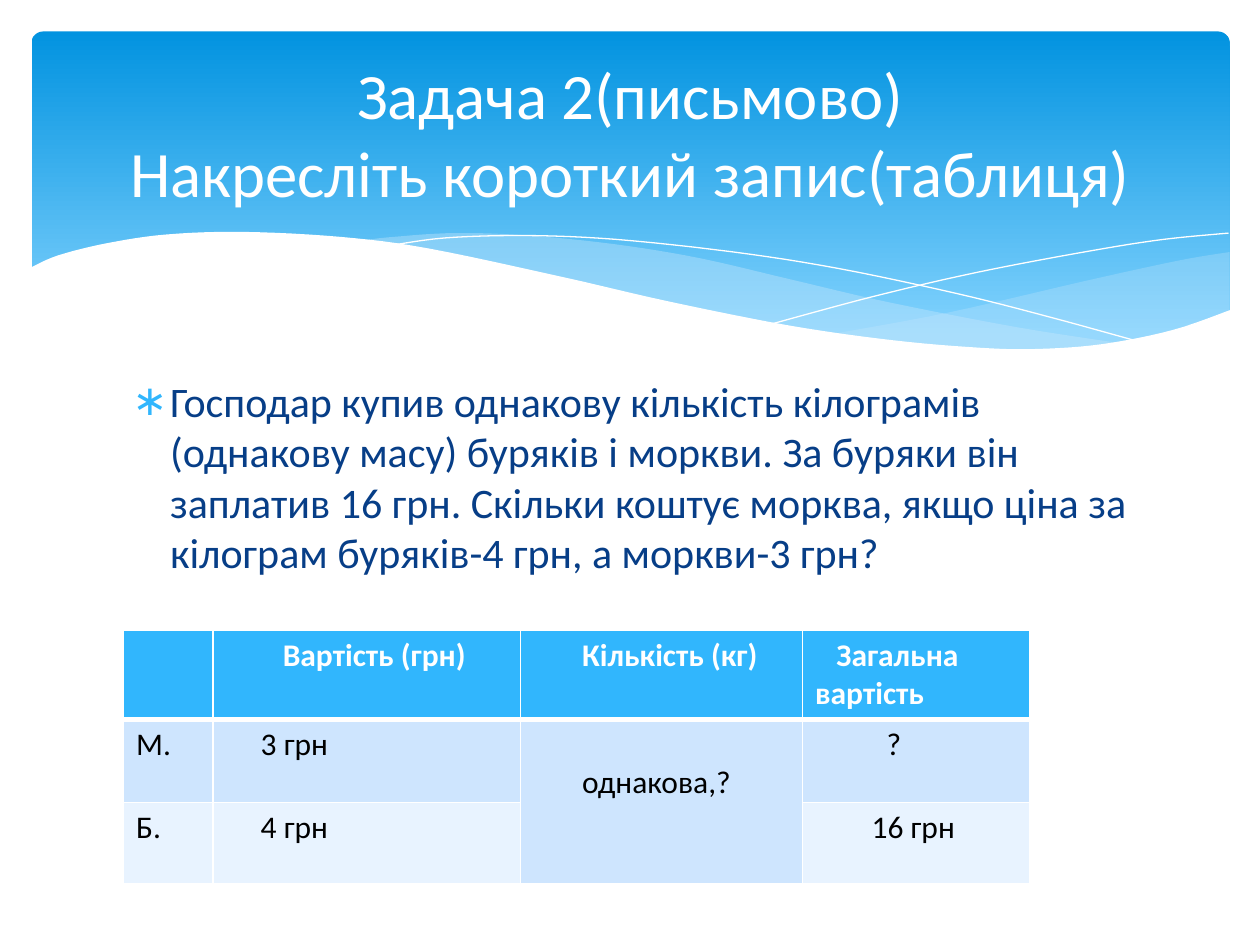
from lxml.etree import SubElement
from pptx import Presentation
from pptx.dml.color import RGBColor
from pptx.enum.shapes import MSO_SHAPE as Preset
from pptx.enum.text import MSO_ANCHOR as Anchor, MSO_AUTO_SIZE as AutoSize, PP_ALIGN as Align
from pptx.oxml.ns import qn
from pptx.util import Pt

WHITE = RGBColor(0xFF, 0xFF, 0xFF)
BLACK = RGBColor(0x00, 0x00, 0x00)
NAVY = RGBColor(0x07, 0x3E, 0x87)
SKY_TOP = RGBColor(0x02, 0x93, 0xE0)
SKY_BOTTOM = RGBColor(0x83, 0xD3, 0xFE)
VEIL = RGBColor(0xC6, 0xE7, 0xFC)
ACCENT = RGBColor(0x31, 0xB6, 0xFD)
ROW_DARK = RGBColor(0xCE, 0xE5, 0xFE)
ROW_LIGHT = RGBColor(0xE8, 0xF3, 0xFF)
FONT = "Calibri"

TITLE = ["Задача 2(письмово)", "Накресліть короткий запис(таблиця)"]
PROBLEM = ("Господар купив однакову кількість кілограмів (однакову масу) буряків і моркви. "
           "За буряки він заплатив 16 грн. Скільки коштує морква, якщо ціна за кілограм "
           "буряків-4 грн, а моркви-3 грн?")

# Each cell: text, left margin, first-line indent
INSET = 7.2
TABLE = [
    [("", INSET, 0), ("Вартість (грн)", 40, 0), ("Кількість (кг)", 35.4, 0),
     ("Загальна вартість", INSET, 12.2)],
    [("М.", INSET, 0), ("3 грн", 27.4, 0), ("однакова,?", 35.4, 0), ("?", 48, 0)],
    [("Б.", INSET, 0), ("4 грн", 27.4, 0), ("", INSET, 0), ("16 грн", 39.5, 0)],
]
ROW_FILLS = [ACCENT, ROW_DARK, ROW_LIGHT]
COLUMN_WIDTHS = [51, 175.7, 161.3, 129.6]
ROW_HEIGHTS = [50.4, 47.5, 46.1]
QUANTITY_TOP = 25.3

# Knots of the wave curves, in points
RIGHT_VEIL = [
    [(702.7, 144), (673, 149), (620, 160.6), (542, 178.6), (476, 190.8)],
    [(476, 190.8), (508, 195), (545, 198.7), (586, 200), (628, 197.3), (668, 189.4),
     (702.7, 177.8)],
]
LEFT_VEIL = [
    [(643, 196.6), (581, 187), (508, 172.8), (453, 160), (400, 147.6), (352, 139.7),
     (302, 134.6), (260, 133.2), (225, 135.4), (206, 137.5)],
    [(206, 137.5), (246, 143.3), (291, 152), (323, 160), (382, 172.8), (445, 185.8),
     (500, 194.4), (548, 199.4), (589, 200), (643, 196.6)],
]
FALLING_LINE = [(222.5, 140.4), (254, 136), (300, 134.6), (352, 136.8), (419, 144),
                (479, 153.4), (547, 167.8), (598, 180.7), (653, 195.8)]
RISING_LINE = [(441.4, 185), (500, 169.2), (559, 155.5), (623.5, 143.3), (665, 136.8),
               (702, 133.2)]
WHITE_WAVE = [
    [(16.6, 153.4), (33, 146), (61, 139), (95, 134), (139, 132.5), (195, 135.4), (245, 142),
     (322, 158.4), (381, 172), (451, 186), (510, 194.4), (560, 198.7), (593, 199.4),
     (630, 196.6), (670, 188.6), (703.4, 177)],
    [(703.4, 236.9), (16.6, 236.9)],
]


def smooth_curve(knots, steps=6):
    """Catmull-Rom points through the knots."""
    ends = [knots[0], *knots, knots[-1]]
    points = [knots[0]]
    for a, b, c, d in zip(ends, ends[1:], ends[2:], ends[3:]):
        for step in range(1, steps + 1):
            t = step / steps
            points.append(tuple(
                (2 * q + (r - p) * t + (2 * p - 5 * q + 4 * r - s) * t ** 2
                 + (3 * q - p - 3 * r + s) * t ** 3) / 2
                for p, q, r, s in zip(a, b, c, d)))
    return points


def add_wave(slide, curves, fill=None, opacity=100):
    """Closed filled wave, or an open white hairline when fill is None."""
    points = [(Pt(x), Pt(y)) for knots in curves for x, y in smooth_curve(knots)]
    builder = slide.shapes.build_freeform(*points[0])
    builder.add_line_segments(points[1:], close=fill is not None)
    wave = builder.convert_to_shape()
    wave.shadow.inherit = False
    if fill is None:
        wave.fill.background()
        wave.line.color.rgb = WHITE
        wave.line.width = Pt(0)
        return
    wave.fill.solid()
    wave.fill.fore_color.rgb = fill
    wave.line.fill.background()
    if opacity < 100:
        color = wave.fill._xPr.find(qn("a:solidFill"))[0]
        SubElement(color, qn("a:alpha"), val=str(opacity * 1000))


def add_backdrop(slide):
    banner = slide.shapes.add_shape(Preset.ROUNDED_RECTANGLE, Pt(18), Pt(18), Pt(684.7), Pt(194.4))
    banner.adjustments[0] = 0.034
    banner.shadow.inherit = False
    banner.line.fill.background()
    banner.fill.gradient()
    banner.fill.gradient_angle = 270
    for stop, color, position in zip(banner.fill.gradient_stops, (SKY_TOP, SKY_BOTTOM), (0, 0.9)):
        stop.color.rgb = color
        stop.position = position
    add_wave(slide, RIGHT_VEIL, VEIL, 29)
    add_wave(slide, LEFT_VEIL, VEIL, 40)
    add_wave(slide, [FALLING_LINE])
    add_wave(slide, [RISING_LINE])
    add_wave(slide, WHITE_WAVE, WHITE)


def add_span(para, text, size, color, bold=False):
    span = para.add_run()
    span.text = text
    span.font.name = FONT
    span.font.size = Pt(size)
    span.font.bold = bold
    span.font.color.rgb = color


def place(box, left, top, width, height):
    """Set the box bounds and bring it to the front."""
    box.left, box.top, box.width, box.height = Pt(left), Pt(top), Pt(width), Pt(height)
    box.text_frame.word_wrap = True
    box.text_frame.auto_size = AutoSize.NONE
    tree = box._element.getparent()
    tree.append(box._element)


def fill_placeholders(slide):
    title, body = slide.shapes.title, slide.placeholders[1]
    place(body, 68.4, 211, 583.2, 271.4)
    para = body.text_frame.paragraphs[0]
    props = para._p.get_or_add_pPr()
    props.set("marL", str(Pt(21.6)))
    props.set("indent", str(Pt(-21.6)))
    bullet_color = SubElement(props, qn("a:buClr"))
    SubElement(bullet_color, qn("a:srgbClr"), val=str(ACCENT))
    SubElement(props, qn("a:buFont"), typeface=FONT)
    SubElement(props, qn("a:buChar"), char="∗")
    add_span(para, PROBLEM, 24, NAVY)

    place(title, 36, 26.6, 648, 98.6)
    title.text_frame.vertical_anchor = Anchor.MIDDLE
    para = title.text_frame.paragraphs[0]
    para.alignment = Align.CENTER
    for number, line in enumerate(TITLE):
        if number:
            para.add_line_break()
        add_span(para, line, 37, WHITE)


def add_borders(cell, bottom):
    props = cell._tc.get_or_add_tcPr()
    for index, (side, width) in enumerate([("L", 1), ("R", 1), ("T", 1), ("B", bottom)]):
        line = SubElement(props, qn(f"a:ln{side}"), w=str(Pt(width)))
        SubElement(SubElement(line, qn("a:solidFill")), qn("a:srgbClr"), val=str(WHITE))
        props.insert(index, line)


def add_price_table(slide):
    table = slide.shapes.add_table(len(TABLE), len(COLUMN_WIDTHS), Pt(70.6), Pt(360),
                                   Pt(sum(COLUMN_WIDTHS)), Pt(sum(ROW_HEIGHTS))).table
    for column, width in zip(table.columns, COLUMN_WIDTHS):
        column.width = Pt(width)
    for r, (cells, fill, height) in enumerate(zip(TABLE, ROW_FILLS, ROW_HEIGHTS)):
        table.rows[r].height = Pt(height)
        header = r == 0
        for c, (text, margin, indent) in enumerate(cells):
            cell = table.cell(r, c)
            cell.fill.solid()
            cell.fill.fore_color.rgb = fill
            add_borders(cell, 3 if header else 1)
            cell.margin_left = Pt(margin)
            para = cell.text_frame.paragraphs[0]
            if indent:
                para._p.get_or_add_pPr().set("indent", str(Pt(indent)))
            if text:
                add_span(para, text, 18, WHITE if header else BLACK, header)
    quantity = table.cell(1, 2)
    quantity.merge(table.cell(2, 2))
    quantity.margin_top = Pt(QUANTITY_TOP)


def main():
    deck = Presentation()
    deck.slide_width, deck.slide_height = Pt(720), Pt(540)
    page = deck.slides.add_slide(deck.slide_layouts[1])
    add_backdrop(page)
    fill_placeholders(page)
    add_price_table(page)
    deck.save("out.pptx")


if __name__ == "__main__":
    main()
